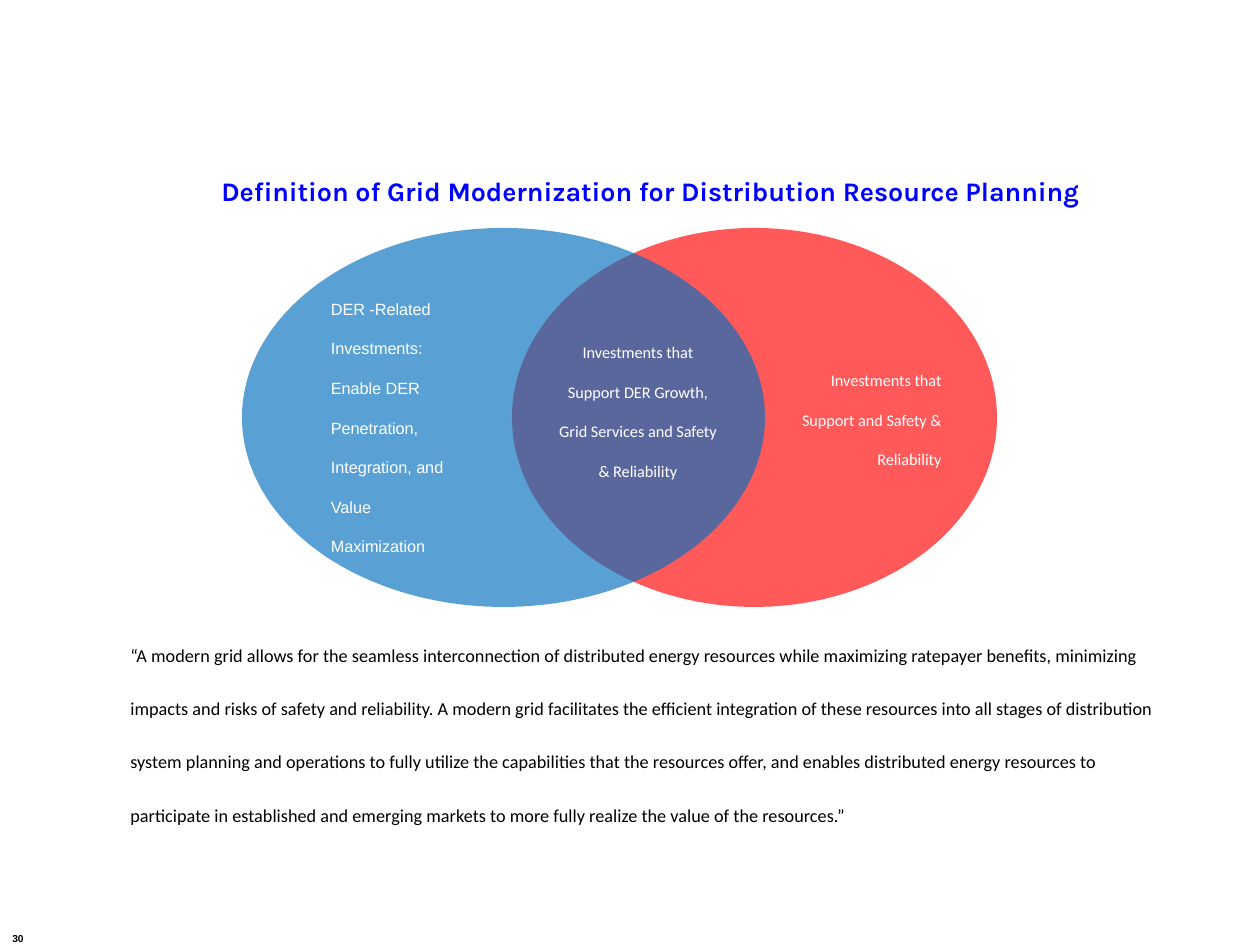
from pptx import Presentation
from pptx.dml.color import RGBColor
from pptx.enum.shapes import MSO_SHAPE
from pptx.enum.text import MSO_ANCHOR, MSO_AUTO_SIZE, PP_ALIGN
from pptx.oxml.ns import qn
from pptx.util import Emu, Pt
from lxml import etree

OVAL = MSO_SHAPE.OVAL
TOP, MIDDLE = MSO_ANCHOR.TOP, MSO_ANCHOR.MIDDLE
FIXED, GROW = MSO_AUTO_SIZE.NONE, MSO_AUTO_SIZE.SHAPE_TO_FIT_TEXT
LEFT, CENTER, RIGHT = PP_ALIGN.LEFT, PP_ALIGN.CENTER, PP_ALIGN.RIGHT
SCALE = 914400 / 126
COLORS = {"red": "FF0000", "blue": "0070C0", "title": "0000FF",
          "white": "FFFFFF", "black": "000000"}
ALPHA, DROP = "65000", "-30000"

HEAD = "Definition of Grid Modernization for Distribution Resource Planning"
DER = ["DER -Related", "Investments:", "Enable DER", "Penetration,",
       "Integration, and", "Value", "Maximization"]
BOTH = ("Investments that Support DER Growth, Grid Services and Safety "
        "& Reliability")
SAFE = "Investments that Support and Safety & Reliability"
QUOTE = (
    "“A modern grid allows for the seamless interconnection of distributed "
    "energy resources while maximizing ratepayer benefits, minimizing impacts "
    "and risks of safety and reliability. A modern grid facilitates the "
    "efficient integration of these resources into all stages of distribution "
    "system planning and operations to fully utilize the capabilities that the "
    "resources offer, and enables distributed energy resources to participate "
    "in established and emerging markets to more fully realize the value of "
    "the resources.”")


def px(num):
    """Turn pixels into EMU."""
    return Emu(round(num * SCALE))


def tint(name):
    """Give the named colour."""
    return RGBColor.from_string(COLORS[name])


def write(shape, lines, size, face, color, align=LEFT, anchor=TOP,
          bold=False, space=None, fit=FIXED):
    """Fill a shape with lowered text, one paragraph a line."""
    frame = shape.text_frame
    frame.word_wrap = True
    frame.auto_size = fit
    frame.vertical_anchor = anchor
    frame.text = "\n".join(lines)
    for para in frame.paragraphs:
        para.alignment = align
        para.line_spacing = space
        font = para.font
        font.name, font.size, font.bold = face, Pt(size), bold
        font.color.rgb = tint(color)
        for run in para.runs:
            run._r.get_or_add_rPr().set("baseline", DROP)


def label(shapes, box, lines, size, face, color, **style):
    """Add a text box."""
    shape = shapes.add_textbox(*map(px, box))
    write(shape, lines, size, face, color, **style)


def oval(shapes, box, color):
    """Add a see-through ellipse."""
    shape = shapes.add_shape(OVAL, *map(px, box))
    shape.shadow.inherit = False
    shape.line.fill.background()
    shape.fill.solid()
    shape.fill.fore_color.rgb = tint(color)
    fill = shape.fill._xPr.find(qn("a:solidFill"))
    etree.SubElement(fill[0], qn("a:alpha")).set("val", ALPHA)
    return shape


def title(slide, box):
    """Place and format the title."""
    shape = slide.shapes.title
    shape.left, shape.top, shape.width, shape.height = map(px, box)
    write(shape, [HEAD], 26.4, "Karla", "title",
          align=CENTER, anchor=MIDDLE, bold=True)


def venn(slide):
    """Draw the two ellipses and their labels as a group."""
    shapes = slide.shapes.add_group_shape().shapes
    oval(shapes, (512, 228, 485, 379), "red")
    left = oval(shapes, (242, 228, 523, 379), "blue")
    write(left, DER, 16, "Arial", "white", anchor=MIDDLE)
    label(shapes, (543, 316, 190, 276), [BOTH], 16, "Calibri", "white",
          align=CENTER)
    label(shapes, (764, 344, 190, 248), [SAFE], 16, "Calibri", "white",
          align=RIGHT)


def main():
    """Build the slide."""
    deck = Presentation()
    deck.slide_width, deck.slide_height = px(1260), px(945)
    slide = deck.slides.add_slide(deck.slide_layouts[5])
    title(slide, (83, 122, 1134, 105))
    venn(slide)
    label(slide.shapes, (118, 606, 1071, 334), [QUOTE], 18, "Calibri",
          "black", space=1.2, fit=GROW)
    label(slide.shapes, (0, 914, 53, 28), ["30"], 10, "Arial", "black",
          bold=True)
    deck.save("out.pptx")


if __name__ == "__main__":
    main()
